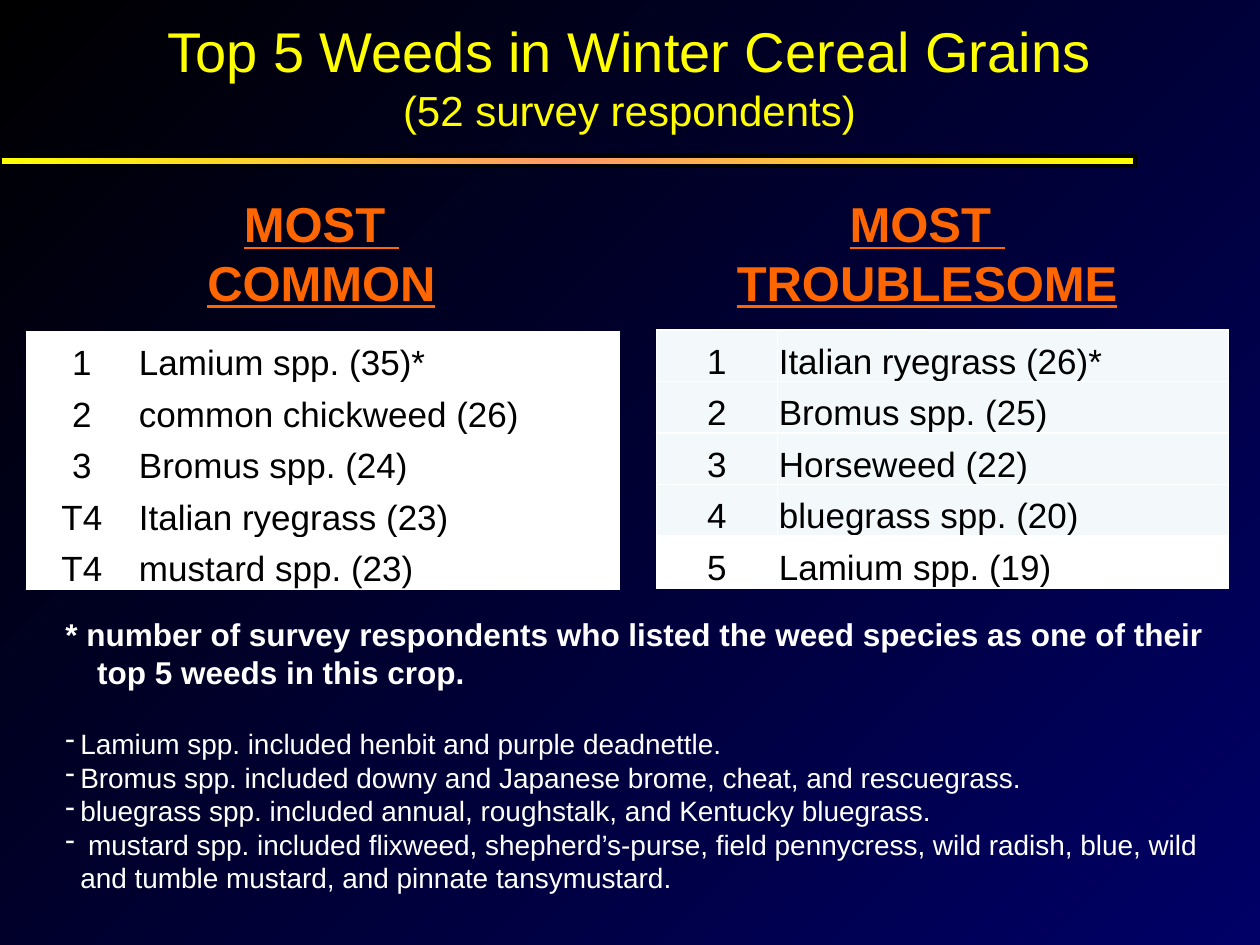
from dataclasses import dataclass

from lxml import etree
from pptx import Presentation
from pptx import util as u
from pptx.dml.color import RGBColor
from pptx.enum import shapes, text
from pptx.oxml.ns import qn


@dataclass(frozen=True)
class Theme:
    font: str = "Arial"
    black: str = "000000"
    navy: str = "000066"
    yellow: str = "FFFF00"
    peach: str = "FF9966"
    orange: str = "FF6600"
    white: str = "FFFFFF"
    pale: str = "F3F9FA"
    title: int = 32
    subtitle: int = 24
    heading: int = 28
    cell: int = 20
    footnote: int = 18
    note: int = 16


@dataclass(frozen=True)
class Box:
    left: float
    top: float
    width: float
    height: float

    def lengths(self) -> list:
        return [u.Cm(v) for v in (self.left, self.top, self.width, self.height)]


@dataclass(frozen=True)
class Ranking:
    heading: tuple
    heading_box: Box
    table_box: Box
    rank_width: float
    row_fills: tuple
    rows: tuple


THEME = Theme()
CENTER, LEFT = text.PP_ALIGN.CENTER, text.PP_ALIGN.LEFT

RANKINGS = (
    Ranking(
        ("MOST ", "COMMON"), Box(3.43, 3.78, 6.1, 2.64),
        Box(0.53, 6.68, 11.96, 5.2), 2.24, (THEME.white,) * 5,
        (("1", "Lamium spp. (35)*"), ("2", "common chickweed (26)"),
         ("3", "Bromus spp. (24)"), ("T4", "Italian ryegrass (23)"),
         ("T4", "mustard spp. (23)"))),
    Ranking(
        ("MOST ", "TROUBLESOME"), Box(14.55, 3.78, 8.28, 2.64),
        Box(13.23, 6.65, 11.53, 5.2), 2.44, (THEME.pale,) * 4 + (THEME.white,),
        (("1", "Italian ryegrass (26)*"), ("2", "Bromus spp. (25)"),
         ("3", "Horseweed (22)"), ("4", "bluegrass spp. (20)"),
         ("5", "Lamium spp. (19)"))),
)
FOOTNOTE = ("* number of survey respondents who listed the weed species "
            "as one of their top 5 weeds in this crop.")
NOTES = (
    "Lamium spp. included henbit and purple deadnettle.",
    "Bromus spp. included downy and Japanese brome, cheat, and rescuegrass.",
    "bluegrass spp. included annual, roughstalk, and Kentucky bluegrass.",
    " mustard spp. included flixweed, shepherd’s-purse, field pennycress, "
    "wild radish, blue, wild and tumble mustard, and pinnate tansymustard.",
)


def rgb(value: str) -> RGBColor:
    return RGBColor.from_string(value)


def set_gradient(fill, owner, colors: tuple, angle: float) -> None:
    """Spread the colours evenly along a linear gradient."""
    fill.gradient()
    fill.gradient_angle = angle
    stop_list = next(owner.iter(qn("a:gsLst")))
    while len(stop_list) < len(colors):
        etree.SubElement(stop_list, qn("a:gs"), pos="0")
    for index, (stop, color) in enumerate(zip(fill.gradient_stops, colors)):
        stop.color.rgb = rgb(color)
        stop.position = index / (len(colors) - 1)


def add_run(paragraph, words: str, size: int, color: str,
            bold: bool = False, underline: bool = False) -> None:
    run = paragraph.add_run()
    run.text = words
    font = run.font
    font.name, font.size, font.color.rgb = THEME.font, u.Pt(size), rgb(color)
    font.bold, font.underline = bold, underline


def add_text_frame(slide, box: Box, wrap: bool = True):
    frame = slide.shapes.add_textbox(*box.lengths()).text_frame
    frame.word_wrap = wrap
    return frame


def next_paragraph(frame, index: int):
    return frame.add_paragraph() if index else frame.paragraphs[0]


def set_hanging(paragraph, indent: float, bullet: str = "") -> None:
    properties = paragraph._p.get_or_add_pPr()
    properties.set("marL", str(u.Cm(indent)))
    properties.set("indent", str(-u.Cm(indent)))
    if bullet:
        etree.SubElement(properties, qn("a:buChar"), char=bullet)


def set_borders(cell, color: str) -> None:
    properties = cell._tc.get_or_add_tcPr()
    for index, side in enumerate(("lnL", "lnR", "lnT", "lnB")):
        line = etree.Element(qn(f"a:{side}"), w=str(u.Pt(1)))
        solid = etree.SubElement(line, qn("a:solidFill"))
        etree.SubElement(solid, qn("a:srgbClr"), val=color)
        properties.insert(index, line)


def add_ranking(slide, ranking: Ranking) -> None:
    # Heading above the table
    frame = add_text_frame(slide, ranking.heading_box)
    for index, words in enumerate(ranking.heading):
        paragraph = next_paragraph(frame, index)
        paragraph.alignment = CENTER
        add_run(paragraph, words, THEME.heading, THEME.orange, True, True)

    # Rank and species columns
    box = ranking.table_box
    table = slide.shapes.add_table(len(ranking.rows), 2, *box.lengths()).table
    table.first_row = table.horz_banding = False
    table.columns[0].width = u.Cm(ranking.rank_width)
    table.columns[1].width = u.Cm(box.width - ranking.rank_width)
    for row, (values, fill) in enumerate(zip(ranking.rows, ranking.row_fills)):
        for column, (words, alignment) in enumerate(zip(values, (CENTER, LEFT))):
            cell = table.cell(row, column)
            cell.fill.solid()
            cell.fill.fore_color.rgb = rgb(fill)
            cell.vertical_anchor = text.MSO_ANCHOR.BOTTOM
            cell.margin_left = cell.margin_right = cell.margin_top = u.Cm(0.03)
            cell.margin_bottom = 0
            set_borders(cell, THEME.white)
            paragraph = cell.text_frame.paragraphs[0]
            paragraph.alignment = alignment
            add_run(paragraph, words, THEME.cell, THEME.black)


def add_title(slide) -> None:
    frame = add_text_frame(slide, Box(0.84, 0, 23.7, 3.05))
    frame.vertical_anchor = text.MSO_ANCHOR.MIDDLE
    lines = (("Top 5 Weeds in Winter Cereal Grains", THEME.title),
             ("(52 survey respondents)", THEME.subtitle))
    for index, (words, size) in enumerate(lines):
        paragraph = next_paragraph(frame, index)
        paragraph.alignment = CENTER
        add_run(paragraph, words, size, THEME.yellow)


def add_divider(slide) -> None:
    bar = slide.shapes.add_shape(shapes.MSO_SHAPE.RECTANGLE,
                                 *Box(0, 3.15, 22.89, 0.2).lengths())
    bar.shadow.inherit = False
    set_gradient(bar.fill, bar._element,
                 (THEME.yellow, THEME.peach, THEME.yellow), 0)
    bar.line.color.rgb = rgb(THEME.black)
    bar.line.width = u.Pt(2.25)


def add_notes(slide) -> None:
    frame = add_text_frame(slide, Box(1.07, 12.27, 23.5, 5.99))
    paragraph = frame.paragraphs[0]
    set_hanging(paragraph, 0.64)
    paragraph.space_after = u.Pt(20.7)
    add_run(paragraph, FOOTNOTE, THEME.footnote, THEME.white, bold=True)
    for words in NOTES:
        paragraph = frame.add_paragraph()
        set_hanging(paragraph, 0.3, "-")
        add_run(paragraph, words, THEME.note, THEME.white)


def main() -> None:
    presentation = Presentation()
    presentation.slide_width, presentation.slide_height = u.Cm(25.4), u.Cm(19.05)
    slide = presentation.slides.add_slide(presentation.slide_layouts[6])
    set_gradient(slide.background.fill, slide._element,
                 (THEME.black, THEME.navy), 315)

    add_divider(slide)
    for ranking in RANKINGS:
        add_ranking(slide, ranking)
    add_title(slide)
    add_notes(slide)
    presentation.save("out.pptx")


if __name__ == "__main__":
    main()
